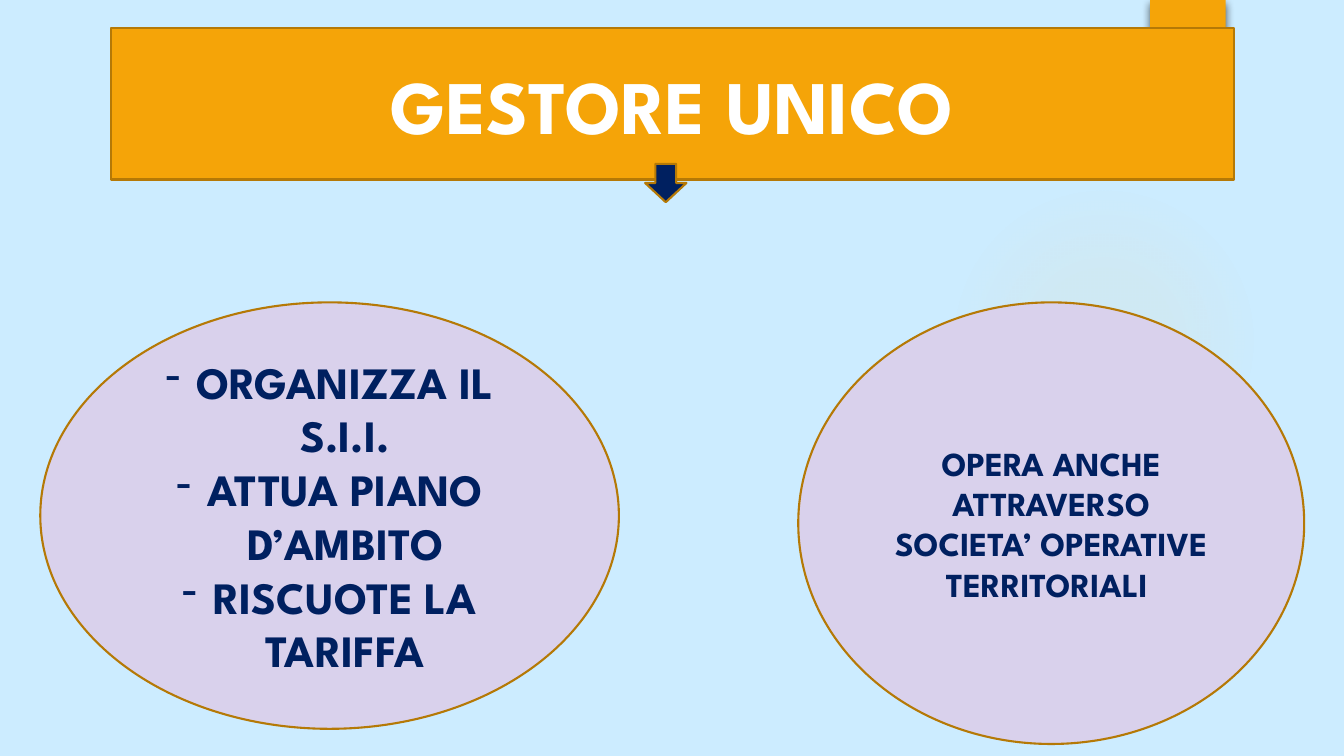
"""Build the GESTORE UNICO slide: a title banner, an arrow and two ovals."""
import lxml.etree
import pptx
import pptx.dml.color
import pptx.enum.shapes
import pptx.enum.text
import pptx.oxml
import pptx.util

Pt = pptx.util.Pt
SHAPE = pptx.enum.shapes.MSO_SHAPE
NS = 'xmlns:a="http://schemas.openxmlformats.org/drawingml/2006/main"'
FONT = "League Spartan"
SKY, ORANGE, BROWN = "CCECFF", "F5A408", "B57906"
LILAC, NAVY, WHITE, GLOW = "D9D1EC", "002060", "FFFFFF", "FAC96A"

TITLE = ("GESTORE UNICO", (79.2, 20.2, 802.1, 108), 54)
GLOW_BOX = (677.5, 131.8, 221.8, 221.8)
GLOW_STOPS = [(0, 7), (36, 6), (69, 0), (100, 0)]
TAB_BOX = (821.5, 0, 54, 90)
ARROW_BOX = (460.8, 117, 29.5, 27.4)
OVALS = [
    (["ORGANIZZA IL S.I.I.", "ATTUA PIANO D’AMBITO", "RISCUOTE LA TARIFFA"],
     (28.8, 216, 413.3, 304.6), 32, True),
    (["OPERA ANCHE ATTRAVERSO SOCIETA’ OPERATIVE TERRITORIALI "],
     (570.2, 216, 361.4, 315.4), 24, False),
]
BULLET_INDENT = 22.5


def rgb(color):
    return pptx.dml.color.RGBColor.from_string(color)


def paint(sp, fill, line=None):
    sp.fill.solid()
    sp.fill.fore_color.rgb = rgb(fill)
    if line:
        sp.line.color.rgb = rgb(line)
        sp.line.width = Pt(1.5)
    else:
        sp.line.fill.background()


def add_shape(s, kind, box, fill, line=None):
    sp = s.shapes.add_shape(kind, *map(Pt, box))
    sp.shadow.inherit = False
    paint(sp, fill, line)
    return sp


def write(sp, lines, size, color, bulleted=False):
    tf = sp.text_frame
    tf.text = "\n".join(lines)
    tf.word_wrap = True
    tf.auto_size = pptx.enum.text.MSO_AUTO_SIZE.NONE
    tf.vertical_anchor = pptx.enum.text.MSO_ANCHOR.MIDDLE
    for p in tf.paragraphs:
        p.alignment = pptx.enum.text.PP_ALIGN.CENTER
        p.line_spacing = 1.0
        if bulleted:
            pPr = p._p.get_or_add_pPr()
            pPr.set("marL", str(Pt(BULLET_INDENT)))
            pPr.set("indent", str(-Pt(BULLET_INDENT)))
            pPr.append(pptx.oxml.parse_xml(f'<a:buChar {NS} char="-"/>'))
        for r in p.runs:
            r.font.name = FONT
            r.font.size = Pt(size)
            r.font.bold = True
            r.font.color.rgb = rgb(color)


def add_glow(s):
    sp = add_shape(s, SHAPE.OVAL, GLOW_BOX, GLOW)
    stops = "".join(
        f'<a:gs pos="{pos * 1000}"><a:srgbClr val="{GLOW}">'
        f'<a:alpha val="{alpha * 1000}"/></a:srgbClr></a:gs>'
        for pos, alpha in GLOW_STOPS)
    grad = pptx.oxml.parse_xml(
        f'<a:gradFill {NS} rotWithShape="1"><a:gsLst>{stops}</a:gsLst>'
        '<a:path path="circle"><a:fillToRect l="50000" t="50000" r="50000" '
        'b="50000"/></a:path></a:gradFill>')
    spPr = sp.element.spPr
    spPr.replace(spPr.find(pptx.oxml.ns.qn("a:solidFill")), grad)


def add_tab(s):
    sp = add_shape(s, SHAPE.RECTANGLE, TAB_BOX, ORANGE)
    effects = sp.element.spPr.find(pptx.oxml.ns.qn("a:effectLst"))
    effects.append(pptx.oxml.parse_xml(
        f'<a:outerShdw {NS} blurRad="{Pt(6)}" dist="{Pt(3)}" dir="5400000" '
        'rotWithShape="0"><a:srgbClr val="000000"><a:alpha val="60000"/>'
        '</a:srgbClr></a:outerShdw>'))


def add_title(s):
    text, box, size = TITLE
    sp = s.shapes.title
    sp.left, sp.top, sp.width, sp.height = map(Pt, box)
    paint(sp, ORANGE, BROWN)
    write(sp, [text], size, WHITE)
    s.shapes.element.append(sp.element)


def main():
    prs = pptx.Presentation()
    prs.slide_width, prs.slide_height = Pt(960), Pt(540)
    s = prs.slides.add_slide(prs.slide_layouts[5])
    s.background.fill.solid()
    s.background.fill.fore_color.rgb = rgb(SKY)
    add_glow(s)
    add_tab(s)
    add_title(s)
    for lines, box, size, bulleted in OVALS:
        sp = add_shape(s, SHAPE.OVAL, box, LILAC, BROWN)
        write(sp, lines, size, NAVY, bulleted)
    add_shape(s, SHAPE.DOWN_ARROW, ARROW_BOX, NAVY, BROWN)
    prs.save("out.pptx")


if __name__ == "__main__":
    main()
